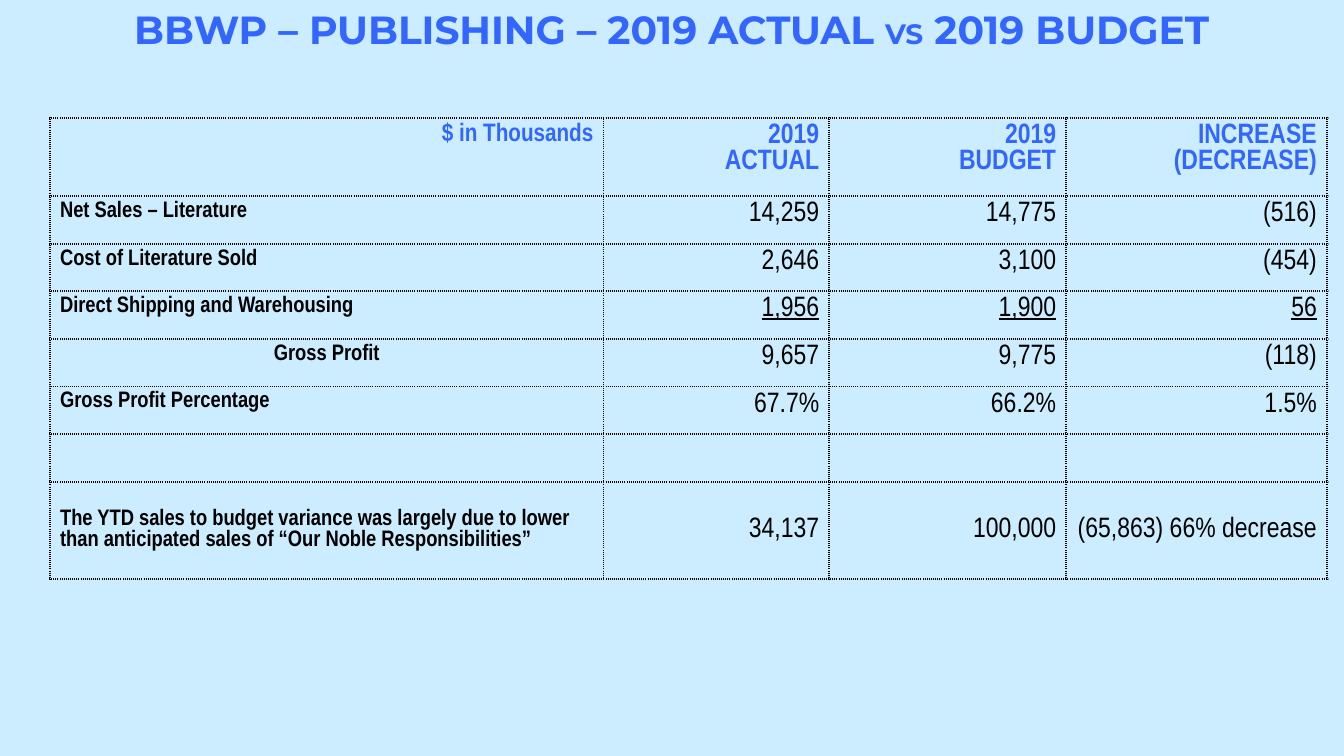
"""Build the slide comparing 2019 publishing results with the budget."""
import pptx
import pptx.dml.color
import pptx.enum.text
import pptx.oxml
import pptx.oxml.ns
import pptx.util

Cm = pptx.util.Cm
Pt = pptx.util.Pt
RGBColor = pptx.dml.color.RGBColor
ALIGN = pptx.enum.text.PP_ALIGN
ANCHOR = pptx.enum.text.MSO_ANCHOR

SKY = RGBColor(0xCC, 0xEC, 0xFF)
BLUE = RGBColor(0x33, 0x66, 0xFF)
BLACK = RGBColor(0, 0, 0)

COLUMN_WIDTHS = [13.95, 5.69, 5.97, 6.57]
ROW_HEIGHTS = [1.97] + [1.2] * 6 + [2.46]
TITLE = [("BBWP – PUBLISHING – 2019 ACTUAL ", 28), ("VS", 20), (" 2019 BUDGET ", 28)]
RESULTS = [
    ["$ in Thousands", "2019\nACTUAL", "2019\nBUDGET", "INCREASE\n(DECREASE)"],
    ["Net Sales – Literature", "14,259", "14,775", "(516)"],
    ["Cost of Literature Sold", "2,646", "3,100", "(454)"],
    ["Direct Shipping and Warehousing", "1,956", "1,900", "56"],
    ["Gross Profit", "9,657", "9,775", "(118)"],
    ["Gross Profit Percentage", "67.7%", "66.2%", "1.5%"],
    ["", "", "", ""],
    ["The YTD sales to budget variance was largely due to lower than anticipated "
     "sales of “Our Noble Responsibilities”", "34,137", "100,000", "(65,863) 66% decrease"],
]
HEADER, SHIPPING, GROSS_PROFIT, VARIANCE = 0, 3, 4, 7


class SlideBuilder:
    """Hold the style and the current slide."""

    table_font = "Arial Narrow"
    title_font = "Montserrat"

    def __init__(self, presentation):
        """Add a title slide with a plain background."""
        self.slide = presentation.slides.add_slide(presentation.slide_layouts[5])
        self.slide.background.fill.solid()
        self.slide.background.fill.fore_color.rgb = SKY

    def style(self, font, color, **values):
        """Apply format values and a colour to a font."""
        for name, value in values.items():
            setattr(font, name, value)
        font.color.rgb = color

    def title(self, parts, left, top, width, height):
        """Place the heading in the title placeholder."""
        heading = self.slide.shapes.title
        place = {"left": left, "top": top, "width": width, "height": height}
        for name, value in place.items():
            setattr(heading, name, Cm(value))
        frame = heading.text_frame
        layout = {"word_wrap": True, "vertical_anchor": ANCHOR.TOP,
                  "auto_size": pptx.enum.text.MSO_AUTO_SIZE.NONE}
        for name, value in layout.items():
            setattr(frame, name, value)
        line = frame.paragraphs[0]
        line.alignment = ALIGN.CENTER
        for words, size in parts:
            run = line.add_run()
            run.text = words
            self.style(run.font, BLUE, name=self.title_font, size=Pt(size), bold=True)

    def borders(self, cell):
        """Draw dotted lines on every side of a cell."""
        properties = cell._tc.get_or_add_tcPr()
        for position, side in enumerate(["lnL", "lnR", "lnT", "lnB"]):
            properties.insert(position, pptx.oxml.parse_xml(
                f'<a:{side} {pptx.oxml.ns.nsdecls("a")} w="{Pt(1.5)}">'
                f'<a:solidFill><a:srgbClr val="{BLACK}"/></a:solidFill>'
                f'<a:prstDash val="sysDot"/></a:{side}>'))

    def cell(self, cell, words, row, column):
        """Fill and format one cell by its place in the table."""
        cell.fill.background()
        self.borders(cell)
        cell.vertical_anchor = ANCHOR.MIDDLE if row == VARIANCE else ANCHOR.TOP
        cell.text_frame.text = words
        is_label = column == 0
        if is_label and row != HEADER:
            alignment = ALIGN.CENTER if row == GROSS_PROFIT else ALIGN.LEFT
        else:
            alignment = ALIGN.RIGHT
        label_size = 18 if row == HEADER else 16
        for line in cell.text_frame.paragraphs:
            line.alignment = alignment
            line.line_spacing = 1.0
            for run in line.runs:
                self.style(run.font, BLUE if row == HEADER else BLACK,
                           name=self.table_font,
                           size=Pt(label_size if is_label else 20),
                           bold=is_label or row == HEADER,
                           underline=row == SHIPPING and not is_label)

    def table(self, rows, left, top):
        """Add the table of results."""
        results = self.slide.shapes.add_table(
            len(rows), len(COLUMN_WIDTHS), Cm(left), Cm(top),
            Cm(sum(COLUMN_WIDTHS)), Cm(sum(ROW_HEIGHTS))).table
        for name in ("first_row", "horz_banding"):
            setattr(results, name, False)
        for column, width in zip(results.columns, COLUMN_WIDTHS):
            column.width = Cm(width)
        for row, height in zip(results.rows, ROW_HEIGHTS):
            row.height = Cm(height)
        for r, entries in enumerate(rows):
            for c, words in enumerate(entries):
                self.cell(results.cell(r, c), words, r, c)


def main():
    """Build and save the presentation."""
    presentation = pptx.Presentation()
    presentation.slide_width = Cm(33.87)
    presentation.slide_height = Cm(19.05)
    builder = SlideBuilder(presentation)
    builder.table(RESULTS, 1.26, 2.97)
    builder.title(TITLE, 0.13, 0, 33.87, 1.45)
    presentation.save("out.pptx")


if __name__ == "__main__":
    main()
